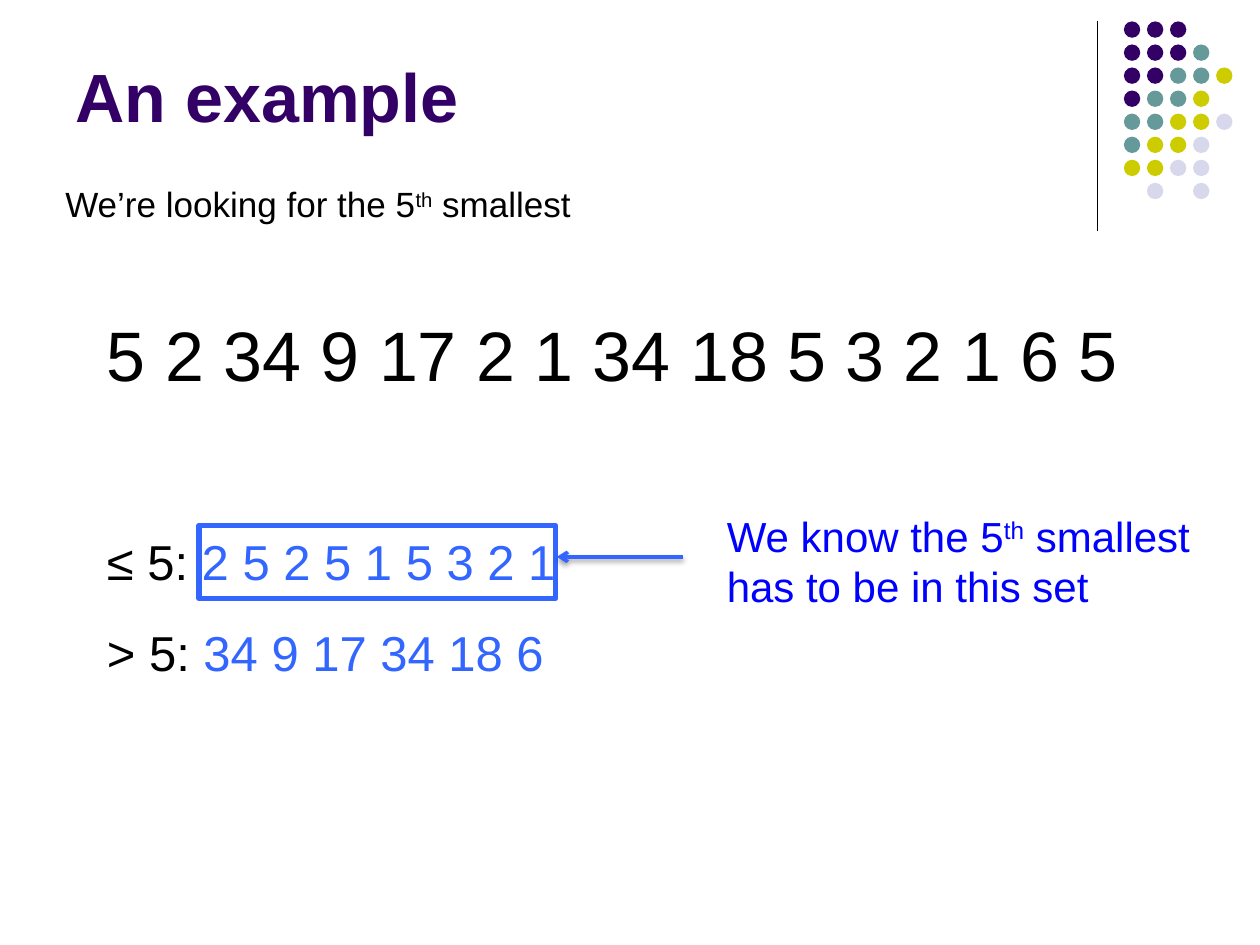
from lxml import etree
from pptx import Presentation
from pptx.dml.color import RGBColor
from pptx.enum import shapes, text
from pptx.oxml import ns
from pptx.util import Inches, Pt

BLACK, BLUE, PURPLE = "000000", "3366FF", "330066"
DOTS = {"P": PURPLE, "T": "669999", "Y": "CCCC00", "L": "D8D8EC"}
ROWS = ["PPP", "PPPT", "PPTTY", "PTTY", "TTYYL", "TYYL", "YYLL", " L L"]


def rgb(code):
    return RGBColor.from_string(code)


def sub(node, tag, **attrs):
    return etree.SubElement(node, ns.qn(tag), **attrs)


def add_text(slide, x, y, w, h, size, runs, bold=False, low=False):
    """Add one paragraph; runs are (words, colour, raised) triples."""
    box = slide.shapes.add_textbox(Inches(x), Inches(y), Inches(w), Inches(h))
    frame = box.text_frame
    frame.word_wrap = True
    if low:
        frame.vertical_anchor = text.MSO_ANCHOR.BOTTOM
    para = frame.paragraphs[0]
    para.font.name, para.font.size, para.font.bold = "Arial", Pt(size), bold
    for words, color, raised in runs:
        run = para.add_run()
        run.text = words
        run.font.color.rgb = rgb(color)
        if raised:
            run.font._element.set("baseline", "30000")


def add_shape(slide, kind, x, y, w, h, fill=None, line=None, width=0):
    shape = slide.shapes.add_shape(kind, Inches(x), Inches(y), Inches(w), Inches(h))
    shape.shadow.inherit = False
    if fill:
        shape.fill.solid()
        shape.fill.fore_color.rgb = rgb(fill)
    else:
        shape.fill.background()
    if line:
        shape.line.color.rgb = rgb(line)
        shape.line.width = Pt(width)
    else:
        shape.line.fill.background()


def add_line(slide, x1, y1, x2, y2, color, width, arrow=False):
    line = slide.shapes.add_connector(
        shapes.MSO_CONNECTOR.STRAIGHT, Inches(x1), Inches(y1), Inches(x2), Inches(y2))
    line.line.color.rgb = rgb(color)
    line.line.width = Pt(width)
    effects = sub(line._element.spPr, "a:effectLst")
    if arrow:
        sub(line.line._get_or_add_ln(), "a:tailEnd", type="arrow")
        shade = sub(effects, "a:outerShdw", blurRad=str(Pt(3.1)), dist=str(Pt(1.6)),
                    dir="5400000", rotWithShape="0")
        sub(sub(shade, "a:srgbClr", val=BLACK), "a:alpha", val="38000")


def add_dots(slide):
    step = 0.183
    for i, row in enumerate(ROWS):
        for j, key in enumerate(row):
            if key in DOTS:
                add_shape(slide, shapes.MSO_SHAPE.OVAL, 8.92 + j * step,
                          0.17 + i * step, 0.13, 0.13, fill=DOTS[key])


def main():
    deck = Presentation()
    deck.slide_width, deck.slide_height = Inches(10), Inches(7.5)
    slide = deck.slides.add_slide(deck.slide_layouts[6])

    # Corner ornament
    add_line(slide, 8.71, 0.17, 8.71, 1.83, BLACK, 0.75)
    add_dots(slide)

    # Title, numbers and task
    add_text(slide, 0.5, 0.33, 8.25, 0.8, 39, [("An example", PURPLE, False)],
             bold=True, low=True)
    add_text(slide, 0.75, 2.42, 8.25, 0.77, 40,
             [("5 2 34 9 17 2 1 34 18 5 3 2 1 6 5", BLACK, False)])
    add_text(slide, 0.42, 1.4, 5.5, 0.44, 20,
             [("We’re looking for the 5", BLACK, False), ("th", BLACK, True),
              (" smallest", BLACK, False)])

    # The two sets
    sets = [("≤ 5: ", "2 5 2 5 1 5 3 2 1"), ("> 5: ", "34 9 17 34 18 6")]
    for i, (label, nums) in enumerate(sets):
        add_text(slide, 0.75, 4.17 + i * 0.72, 4.08, 0.57, 28,
                 [(label, BLACK, False), (nums, BLUE, False)])

    # Marked set and its note
    add_shape(slide, shapes.MSO_SHAPE.RECTANGLE, 1.58, 4.17, 2.83, 0.58,
              line=BLUE, width=3)
    add_line(slide, 5.42, 4.42, 4.42, 4.42, BLUE, 2, arrow=True)
    note = "0000FF"
    add_text(slide, 5.67, 4, 4, 0.91, 24,
             [("We know the 5", note, False), ("th", note, True),
              (" smallest has to be in this set", note, False)])

    deck.save("out.pptx")


if __name__ == "__main__":
    main()
